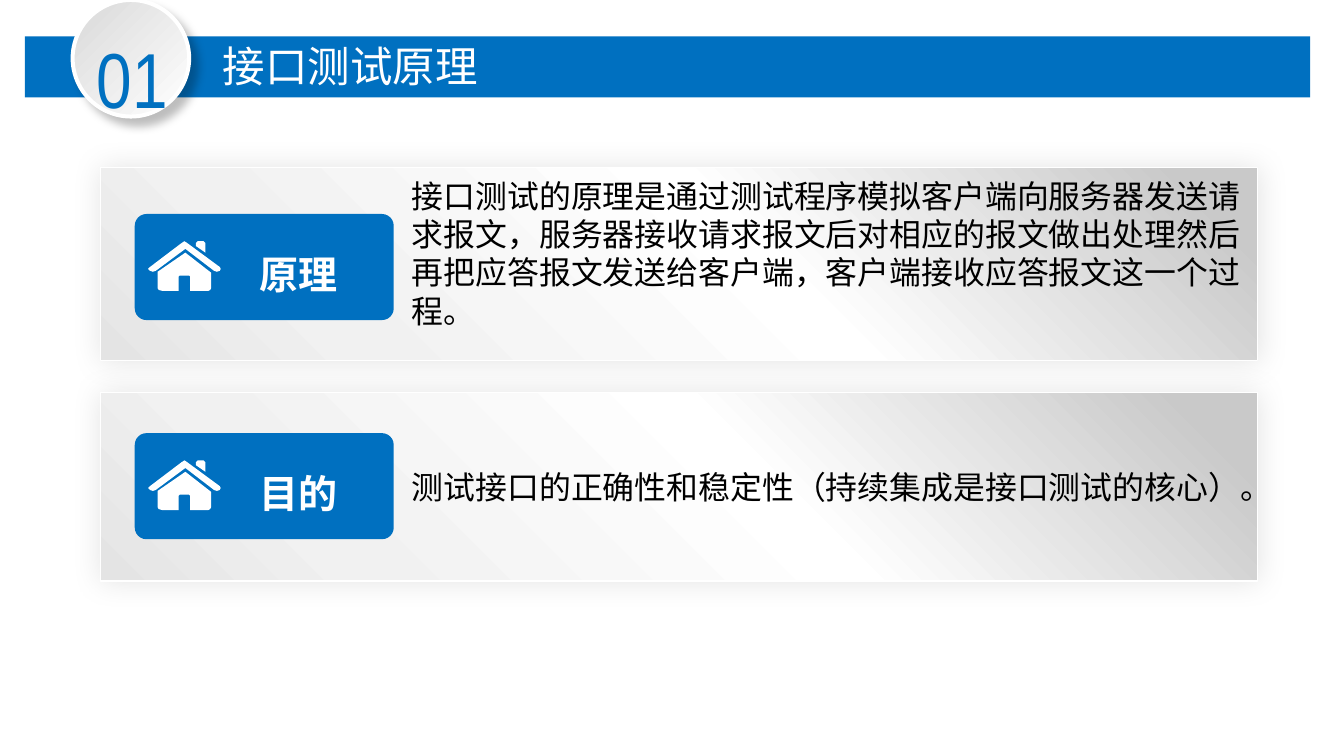
from dataclasses import dataclass

from lxml.etree import SubElement
from pptx import Presentation
from pptx.dml.color import RGBColor
from pptx.enum.shapes import MSO_SHAPE
from pptx.enum.text import MSO_ANCHOR, MSO_AUTO_SIZE, PP_ALIGN
from pptx.oxml.ns import qn
from pptx.util import Pt


@dataclass(frozen=True)
class Theme:
    blue: str = "0070C0"
    white: str = "FFFFFF"
    black: str = "000000"
    panel_stops: tuple = ((6, "C9C9C9"), (43, "FFFFFF"), (80, "F1F1F1"), (100, "E4E4E4"))
    disc_stops: tuple = ((0, "D9D9D9"), (100, "FFFFFF"))
    cjk: str = "Noto Sans CJK SC"
    latin: str = "Arial Narrow"
    number: float = 58.7
    title: float = 32
    label: float = 29.4
    body: float = 24


THEME = Theme()

# House icon outlines, in hundredths of an inch from its top left corner
HOUSE = (
    # chimney
    ((60, 2), (58, 0), (52, 0), (50, 2), (50, 5), (60, 12)),
    # roof
    ((75, 27), (41, 2), (38, 0.5), (35, 2), (2, 27), (0.5, 29), (2, 31), (5, 32),
     (8, 31), (39, 8), (69, 31), (72, 32), (75, 31), (76, 29)),
    # walls and door
    ((10, 32), (10, 49), (11, 51), (15, 52), (32, 52), (32, 37), (33, 36), (43, 36),
     (44, 37), (44, 52), (63, 52), (65, 51), (66, 49), (66, 33), (39, 12)),
)

# Label, text, panel top and height, badge top, text top, width and height
CARDS = (
    ("原理",
     "接口测试的原理是通过测试程序模拟客户端向服务器发送请求报文，服务器接收请求报文后"
     "对相应的报文做出处理然后再把应答报文发送给客户端，客户端接收应答报文这一个过程。",
     126, 145.4, 161.2, 128, 656.6, 150),
    ("目的", "测试接口的正确性和稳定性（持续集成是接口测试的核心）。",
     295.9, 141.8, 326.3, 347.6, 646.6, 80),
)


def rgb(color):
    return RGBColor.from_string(color)


def add_block(s, kind, box, color=None, adj=None):
    sp = s.shapes.add_shape(kind, *map(Pt, box))
    sp.shadow.inherit = False
    sp.line.fill.background()
    if color:
        sp.fill.solid()
        sp.fill.fore_color.rgb = rgb(color)
    if adj is not None:
        sp.adjustments[0] = adj
    return sp


def set_outline(sp, width):
    sp.line.color.rgb = rgb(THEME.white)
    sp.line.width = Pt(width)


def set_gradient(sp, stops, angle):
    sp.fill.gradient()
    sp.fill.gradient_angle = 360 - angle
    stop_list = sp.element.spPr.find(".//" + qn("a:gsLst"))
    for stop in list(stop_list):
        stop_list.remove(stop)
    for position, color in stops:
        stop = SubElement(stop_list, qn("a:gs"), pos=str(position * 1000))
        SubElement(stop, qn("a:srgbClr"), val=color)


def set_shadow(sp, opacity, blur, distance, angle):
    effects = sp.element.spPr.find(qn("a:effectLst"))
    shadow = SubElement(effects, qn("a:outerShdw"), blurRad=str(Pt(blur)),
                        dist=str(Pt(distance)), dir=str(angle * 60000),
                        algn="ctr", rotWithShape="0")
    color = SubElement(shadow, qn("a:srgbClr"), val=THEME.black)
    SubElement(color, qn("a:alpha"), val=str(opacity * 1000))


def write(sp, text, size, color, font=THEME.cjk, align=PP_ALIGN.LEFT, bold=False,
          anchor=MSO_ANCHOR.TOP, margins=(7.2, 3.6)):
    tf = sp.text_frame
    tf.word_wrap = True
    tf.auto_size = MSO_AUTO_SIZE.NONE
    tf.vertical_anchor = anchor
    tf.margin_left = tf.margin_right = Pt(margins[0])
    tf.margin_top = tf.margin_bottom = Pt(margins[1])
    p = tf.paragraphs[0]
    p.text = text
    p.alignment = align
    p.line_spacing = 1.0
    p.font.size = Pt(size)
    p.font.bold = bold
    p.font.color.rgb = rgb(color)
    p.font.name = font
    # East Asian typeface
    defaults = p._p.pPr.find(qn("a:defRPr"))
    SubElement(defaults, qn("a:ea"), typeface=font)


def add_text(s, box, *args, **kwargs):
    sp = s.shapes.add_textbox(*map(Pt, box))
    write(sp, *args, **kwargs)


def add_house(s, left, top):
    first, *others = HOUSE
    builder = s.shapes.build_freeform(*first[0], scale=Pt(0.72))
    builder.add_line_segments(first[1:])
    for outline in others:
        builder.move_to(*outline[0])
        builder.add_line_segments(outline[1:])
    sp = builder.convert_to_shape(Pt(left), Pt(top))
    sp.shadow.inherit = False
    sp.fill.solid()
    sp.fill.fore_color.rgb = rgb(THEME.white)
    sp.line.fill.background()


def add_header(s, number, text):
    add_block(s, MSO_SHAPE.RECTANGLE, (18.7, 27.4, 968.4, 46.1), THEME.blue)
    disc = add_block(s, MSO_SHAPE.OVAL, (54.7, 0, 87.8, 87.8))
    set_gradient(disc, THEME.disc_stops, 45)
    set_outline(disc, 3)
    set_shadow(disc, 25, 7, 8, 45)
    add_text(s, (59.8, 19.4, 79.9, 78.5), number, THEME.number, THEME.blue,
             font=THEME.latin, align=PP_ALIGN.CENTER)

    # Title, brought in front of the bar
    title = s.shapes.title
    title.left, title.top, title.width, title.height = map(Pt, (160.6, 22.7, 374.4, 54))
    write(title, text, THEME.title, THEME.white, anchor=MSO_ANCHOR.MIDDLE)
    title.element.getparent().append(title.element)


def add_card(s, label, text, top, height, badge_top, text_top, text_width, text_height):
    panel = add_block(s, MSO_SHAPE.ROUNDED_RECTANGLE, (75.6, top, 871.9, height), adj=0)
    set_gradient(panel, THEME.panel_stops, 135)
    set_outline(panel, 1)
    set_shadow(panel, 11, 22, 0, 0)

    # Badge with icon and label
    add_block(s, MSO_SHAPE.ROUNDED_RECTANGLE, (101.5, badge_top, 195.1, 79.9),
              THEME.blue, adj=0.11)
    add_house(s, 111.6, badge_top + 20.5)
    add_text(s, (166.3, badge_top + 24, 116.6, 46), label, THEME.label, THEME.white,
             align=PP_ALIGN.CENTER, bold=True)

    add_text(s, (300.2, text_top, text_width, text_height), text, THEME.body,
             THEME.black, margins=(10, 5))


def main():
    prs = Presentation()
    prs.slide_width, prs.slide_height = Pt(1012.5), Pt(569.5)
    s = prs.slides.add_slide(prs.slide_layouts[5])
    s.background.fill.solid()
    s.background.fill.fore_color.rgb = rgb(THEME.white)
    add_header(s, "01", "接口测试原理")
    for card in CARDS:
        add_card(s, *card)
    prs.save("out.pptx")


if __name__ == "__main__":
    main()
